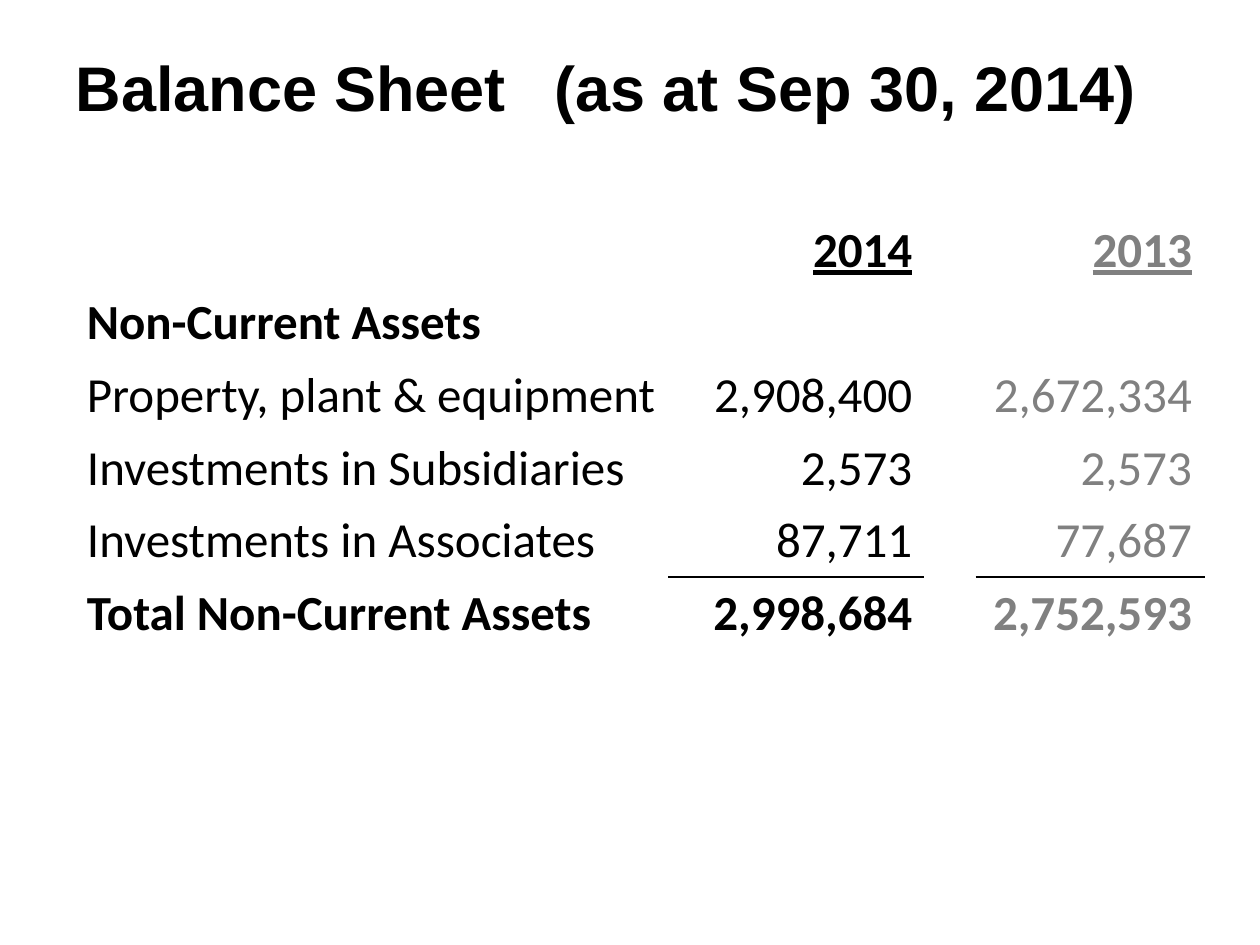
"""Build the balance sheet slide with its non-current assets table."""
import lxml.etree
import pptx
import pptx.dml.color
import pptx.enum.text
import pptx.oxml
import pptx.oxml.ns
import pptx.util

WIDTH, HEIGHT = pptx.util.Inches(10), pptx.util.Inches(7.5)
COLOURS = {"current": "000000", "prior": "808080", "rule": "000000"}
COLUMN_SHARES = [0.472, 0.203, 0.041, 0.181]
ROW_SHARE = 0.07
SPACER_SHARE = 0.035
LABEL, CURRENT, GAP, PRIOR = range(4)
STATEMENT = [
    ("", "2014", "2013"),
    ("Non-Current Assets", "", ""),
    ("Property, plant & equipment", "2,908,400", "2,672,334"),
    ("Investments in Subsidiaries", "2,573", "2,573"),
    ("Investments in Associates", "87,711", "77,687"),
    ("Total Non-Current Assets", "2,998,684", "2,752,593"),
]
HEADER, SECTION, LAST_ITEM, TOTAL = 0, 1, 4, 5


def style_font(font, name, size, colour, bold):
    font.name = name
    font.size = pptx.util.Pt(size)
    font.bold = bold
    font.color.rgb = pptx.dml.color.RGBColor.from_string(COLOURS[colour])


def add_tab_stop(paragraph, position):
    properties = paragraph._p.get_or_add_pPr()
    stops = lxml.etree.SubElement(properties, pptx.oxml.ns.qn("a:tabLst"))
    lxml.etree.SubElement(stops, pptx.oxml.ns.qn("a:tab"), pos=str(position), algn="l")


def add_heading(slide):
    heading = slide.shapes.title
    heading.left, heading.top = int(WIDTH * 0.05), int(HEIGHT * 0.039)
    heading.width, heading.height = int(WIDTH * 0.95), int(HEIGHT * 0.105)
    frame = heading.text_frame
    frame.vertical_anchor = pptx.enum.text.MSO_ANCHOR.MIDDLE
    frame.text = "Balance Sheet\t(as at Sep 30, 2014)"
    paragraph = frame.paragraphs[0]
    paragraph.alignment = pptx.enum.text.PP_ALIGN.LEFT
    add_tab_stop(paragraph, int(WIDTH * 0.38))
    style_font(paragraph.font, "Arial", 36, "current", True)


def add_rule(cell, side):
    border = pptx.oxml.parse_xml(
        f'<a:{side} {pptx.oxml.ns.nsdecls("a")} w="{pptx.util.Pt(1)}"><a:solidFill>'
        f'<a:srgbClr val="{COLOURS["rule"]}"/></a:solidFill></a:{side}>'
    )
    cell._tc.get_or_add_tcPr().insert(0, border)


def write_entry(cell, text, row, column):
    cell.text = text
    paragraph = cell.text_frame.paragraphs[0]
    if column != LABEL:
        paragraph.alignment = pptx.enum.text.PP_ALIGN.RIGHT
    colour = "prior" if column == PRIOR else "current"
    style_font(paragraph.font, "Calibri", 28, colour, row in (HEADER, SECTION, TOTAL))
    paragraph.font.underline = row == HEADER


def add_statement(slide):
    row_heights = [ROW_SHARE] * len(STATEMENT) + [SPACER_SHARE]
    statement = slide.shapes.add_table(
        len(row_heights), len(COLUMN_SHARES),
        int(WIDTH * 0.059), int(HEIGHT * 0.227),
        int(WIDTH * sum(COLUMN_SHARES)), int(HEIGHT * sum(row_heights)),
    ).table
    statement.first_row = statement.horz_banding = False
    for column, share in zip(statement.columns, COLUMN_SHARES):
        column.width = int(WIDTH * share)
    for row, share in zip(statement.rows, row_heights):
        row.height = int(HEIGHT * share)
    for cell in statement.iter_cells():
        cell.fill.background()
    for row, entries in enumerate(STATEMENT):
        for column, text in zip((LABEL, CURRENT, PRIOR), entries):
            if text:
                write_entry(statement.cell(row, column), text, row, column)
    for column in (CURRENT, PRIOR):
        add_rule(statement.cell(LAST_ITEM, column), "lnB")
        add_rule(statement.cell(TOTAL, column), "lnT")


def main():
    deck = pptx.Presentation()
    deck.slide_width, deck.slide_height = WIDTH, HEIGHT
    slide = deck.slides.add_slide(deck.slide_layouts.get_by_name("Title Only"))
    add_heading(slide)
    add_statement(slide)
    deck.save("out.pptx")


if __name__ == "__main__":
    main()
